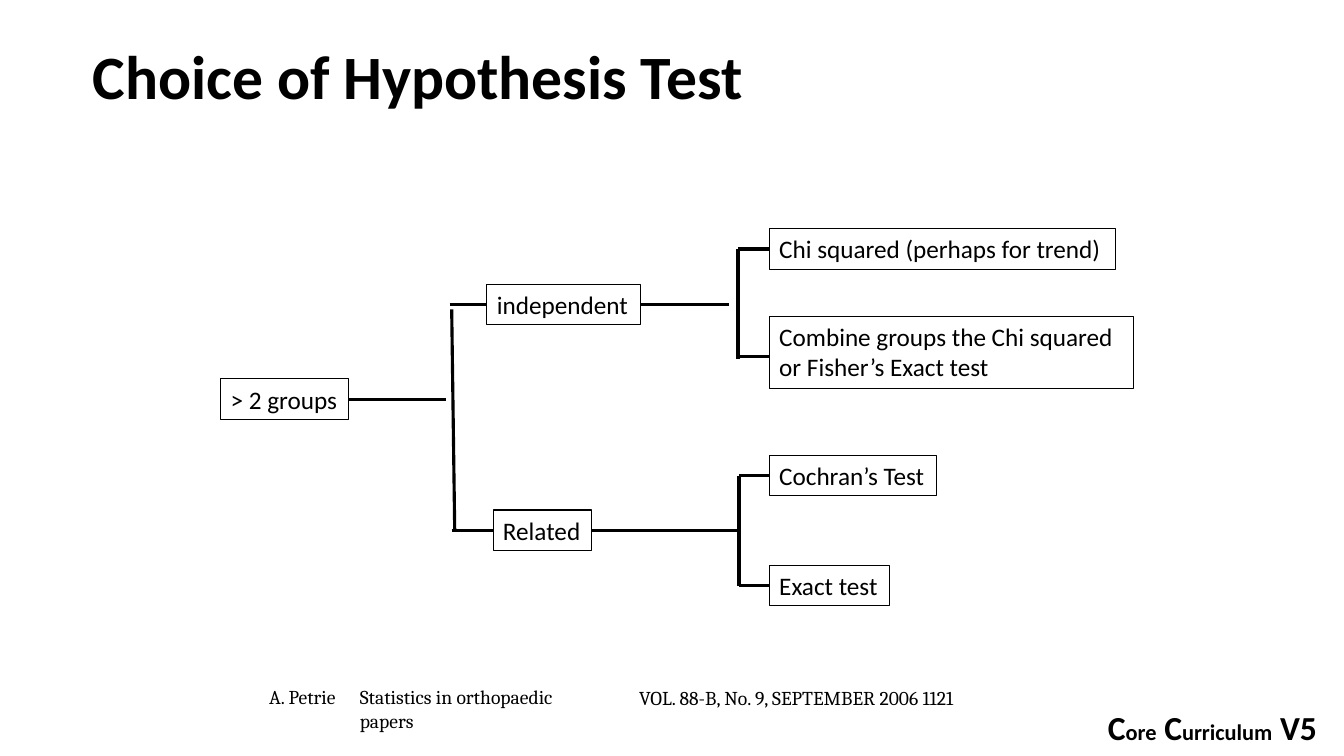
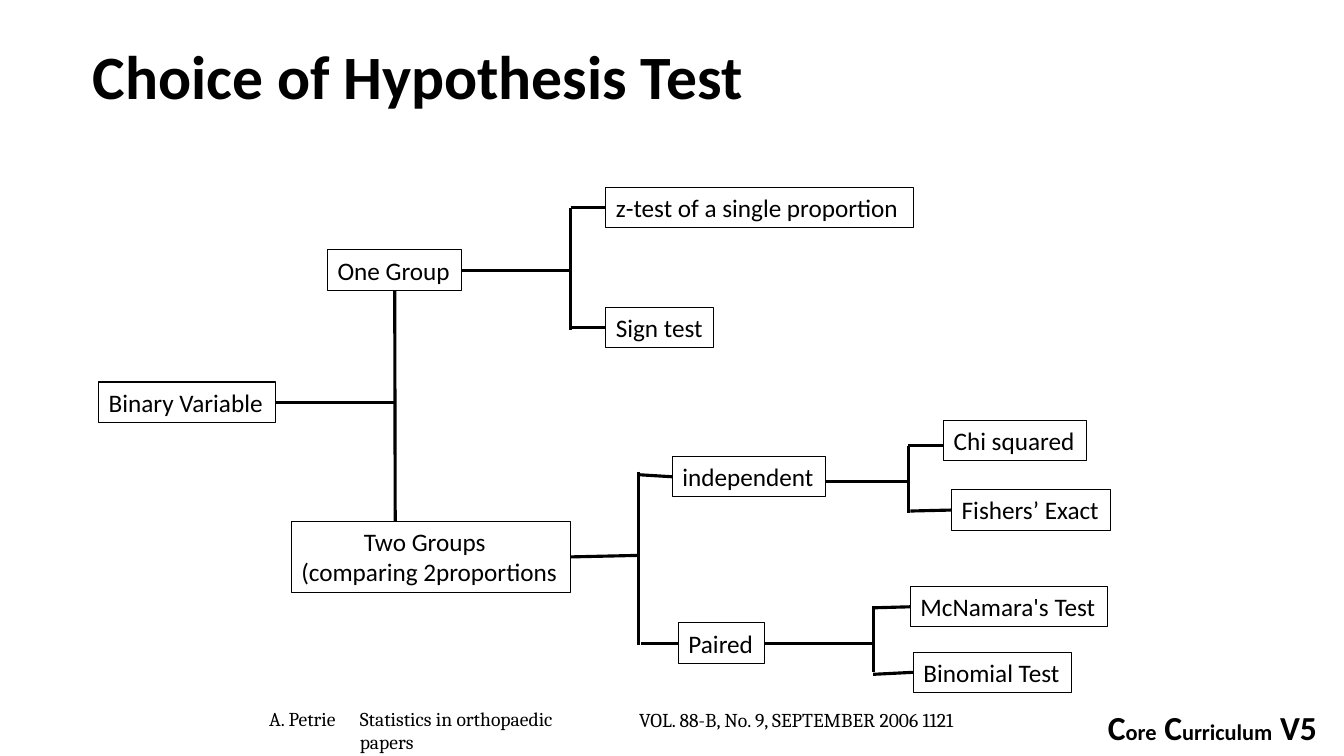
from lxml import etree
from pptx import Presentation
from pptx.dml.color import RGBColor
from pptx.enum.shapes import MSO_CONNECTOR, MSO_SHAPE
from pptx.enum.text import MSO_ANCHOR, PP_ALIGN
from pptx.oxml.ns import qn
from pptx.util import Inches, Pt

LINE = MSO_CONNECTOR.STRAIGHT
RECT = MSO_SHAPE.RECTANGLE
TOP = MSO_ANCHOR.TOP
LEFT = PP_ALIGN.LEFT
BLACK = RGBColor(0, 0, 0)
SANS, SERIF = "Calibri", "Cambria"
WEST, SOUTH, EAST = 1, 2, 3

BRAND = [("C", 24), ("ore", 16), (" C", 24), ("urriculum", 16), (" V5", 24)]

# Boxes: key -> left, top, width, text
# Links: pairs of ends, each a point or a box key with a side
MULTI_BOXES = {
    "groups": (2.19, 3.76, 1.27, "> 2 groups"),
    "indep": (4.83, 2.82, 1.52, "independent"),
    "related": (4.89, 5.06, 0.98, "Related"),
    "trend": (7.63, 2.27, 3.43, "Chi squared (perhaps for trend)"),
    "combine": (7.63, 3.14, 3.61,
                "Combine groups the Chi squared\nor Fisher’s Exact test"),
    "cochran": (7.63, 4.52, 1.66, "Cochran’s Test"),
    "exact": (7.63, 5.61, 1.19, "Exact test"),
}
MULTI_LINKS = [
    (("groups", EAST), (4.42, 3.96)),
    ((4.48, 3.07), (4.51, 5.26)),
    ((4.46, 3.02), ("indep", WEST)),
    ((4.48, 5.26), ("related", WEST)),
    (("indep", EAST), (7.23, 3.02)),
    ((7.32, 2.47), (7.32, 3.56)),
    ((7.32, 2.47), ("trend", WEST)),
    ((7.32, 3.54), (7.63, 3.54)),
    (("related", EAST), (7.33, 5.26)),
    ((7.33, 4.72), (7.33, 5.81)),
    ((7.33, 4.72), ("cochran", WEST)),
    ((7.33, 5.81), ("exact", WEST)),
]

BINARY_BOXES = {
    "binary": (0.98, 3.79, 1.75, "Binary Variable"),
    "one": (3.25, 2.48, 1.33, "One Group"),
    "two": (2.89, 5.17, 2.77, "Two Groups\n(comparing 2proportions"),
    "ztest": (6.01, 1.86, 3.05, "z-test of a single proportion"),
    "sign": (6.01, 3.05, 1.07, "Sign test"),
    "indep": (6.67, 4.53, 1.52, "independent"),
    "paired": (6.73, 6.18, 0.85, "Paired"),
    "chi": (9.36, 4.17, 1.42, "Chi squared"),
    "fisher": (9.44, 4.86, 1.57, "Fishers’ Exact"),
    "mcnemar": (9.03, 5.82, 1.95, "McNamara's Test"),
    "binom": (9.06, 6.47, 1.57, "Binomial Test"),
}
BINARY_LINKS = [
    (("binary", EAST), (3.92, 3.99)),
    (("one", SOUTH), (3.92, 5.17)),
    (("one", EAST), (5.66, 2.68)),
    ((5.66, 2.06), (5.66, 3.27)),
    ((5.66, 2.06), ("ztest", WEST)),
    ((5.66, 3.25), ("sign", WEST)),
    (("two", EAST), (6.33, 5.51)),
    ((6.33, 4.68), (6.33, 6.4)),
    ((6.34, 4.71), ("indep", WEST)),
    ((6.36, 6.38), ("paired", WEST)),
    ((8.19, 4.78), (9.01, 4.78)),
    ((9.01, 4.42), (9.01, 5.09)),
    ((9.01, 4.42), (9.36, 4.42)),
    ((9.03, 5.07), ("fisher", WEST)),
    (("paired", EAST), (8.66, 6.38)),
    ((8.66, 6.01), (8.66, 6.67)),
    ((8.66, 6.03), ("mcnemar", WEST)),
    ((8.66, 6.69), ("binom", WEST)),
]


def style(font, size, name=SANS, bold=False):
    font.size, font.name, font.bold = Pt(size), name, bold
    font.color.rgb = BLACK


def add_text(slide, x, y, w, h, text=""):
    """Add a wrapping text box and return its first paragraph."""
    frame = slide.shapes.add_textbox(
        Inches(x), Inches(y), Inches(w), Inches(h)).text_frame
    frame.word_wrap = True
    para = frame.paragraphs[0]
    para.text = text
    return para


def add_title(slide):
    para = add_text(slide, 0.82, 0.41, 11.5, 1.45, "Choice of Hypothesis Test")
    para.line_spacing = 0.9
    style(para.font, 44, bold=True)


def add_brand(slide):
    para = add_text(slide, 10.89, 6.96, 2.35, 0.5)
    for text, size in BRAND:
        run = para.add_run()
        run.text = text
        style(run.font, size, bold=True)


def add_source(slide, y):
    for x, dy, w, text in (
            (2.57, 0, 1, "A. Petrie"),
            (3.47, 0, 2.65, "Statistics in orthopaedic papers"),
            (6.24, 0.01, 3.74, "VOL. 88-B, No. 9, SEPTEMBER 2006 1121")):
        style(add_text(slide, x, y + dy, w, 0.34, text).font, 14, SERIF)


def add_box(slide, x, y, w, text):
    """Add an outlined box as high as its one or two lines need."""
    high = 0.71 if "\n" in text else 0.4
    box = slide.shapes.add_shape(
        RECT, Inches(x), Inches(y), Inches(w), Inches(high))
    box.shadow.inherit = False
    box.fill.background()
    box.line.color.rgb = BLACK
    box.line.width = Pt(0.75)
    frame = box.text_frame
    frame.word_wrap = True
    frame.vertical_anchor = TOP
    frame.margin_right = 0
    frame.text = text
    for para in frame.paragraphs:
        para.alignment = LEFT
        style(para.font, 18)
    return box


def find_spot(end, boxes):
    """Return the place of a link's end in EMU."""
    if not isinstance(end[0], str):
        return Inches(end[0]), Inches(end[1])
    box, side = boxes[end[0]], end[1]
    dx, dy = {WEST: (0, 0.5), SOUTH: (0.5, 1), EAST: (1, 0.5)}[side]
    return int(box.left + dx * box.width), int(box.top + dy * box.height)


def add_link(slide, start, end, boxes):
    link = slide.shapes.add_connector(
        LINE, *find_spot(start, boxes), *find_spot(end, boxes))
    link.line.color.rgb = BLACK
    link.line.width = Pt(2.25)
    etree.SubElement(link._element.spPr, qn("a:effectLst"))
    for spot, join in ((start, link.begin_connect), (end, link.end_connect)):
        if isinstance(spot[0], str):
            join(boxes[spot[0]], spot[1])


def add_tree(deck, nodes, links, foot):
    """Add a slide with a decision tree and return its boxes by key."""
    slide = deck.slides.add_slide(deck.slide_layouts[6])
    add_brand(slide)
    add_title(slide)
    add_source(slide, foot)
    boxes = {key: add_box(slide, *node) for key, node in nodes.items()}
    for start, end in links:
        add_link(slide, start, end, boxes)
    return boxes


def main():
    deck = Presentation()
    deck.slide_width, deck.slide_height = Inches(13.33), Inches(7.5)
    add_tree(deck, MULTI_BOXES, MULTI_LINKS, 6.75)
    boxes = add_tree(deck, BINARY_BOXES, BINARY_LINKS, 6.96)
    head = boxes["two"].text_frame.paragraphs[0]
    head._p.get_or_add_pPr().set("marL", str(Inches(0.62)))
    deck.save("out.pptx")


if __name__ == "__main__":
    main()
